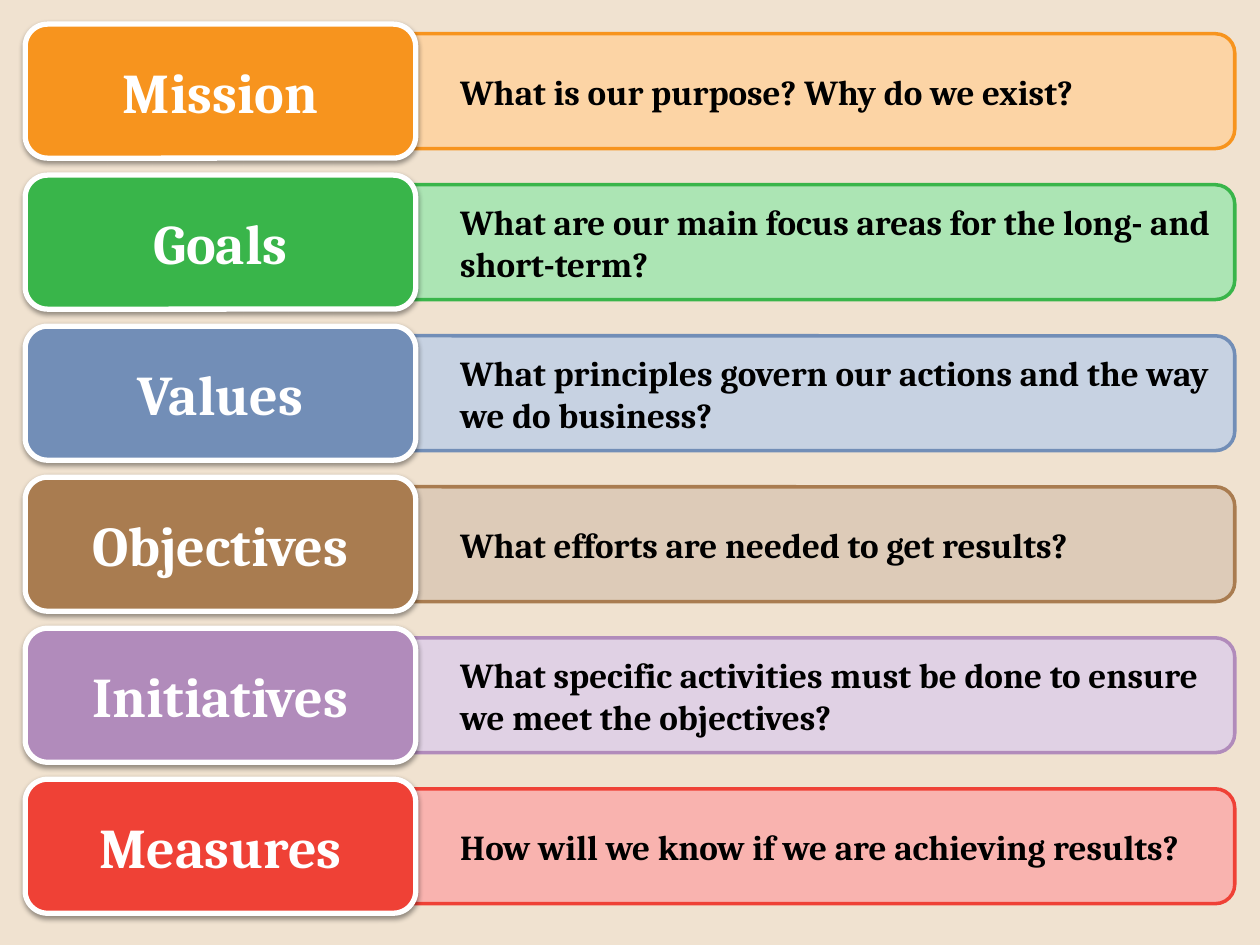
from lxml.etree import SubElement
from pptx import Presentation
from pptx.dml.color import RGBColor
from pptx.enum.shapes import MSO_SHAPE
from pptx.enum.text import MSO_ANCHOR, PP_ALIGN
from pptx.oxml.ns import qn
from pptx.util import Pt

COLORS = {
    "background": "F0E2D0", "white": "FFFFFF", "black": "000000",
    "orange": "F7941E", "orange_tint": "FCD4A5",
    "green": "39B54A", "green_tint": "ACE5B4",
    "blue": "728EB7", "blue_tint": "C7D2E2",
    "brown": "A97C50", "brown_tint": "DDCBB8",
    "purple": "B18BBB", "purple_tint": "E0D1E4",
    "red": "EF4136", "red_tint": "F9B3AF",
}
FONT = "Cambria"
ROWS = [
    ("Mission", "What is our purpose? Why do we exist?", "orange"),
    ("Goals", "What are our main focus areas for the long- and short-term?", "green"),
    ("Values", "What principles govern our actions and the way we do business?", "blue"),
    ("Objectives", "What efforts are needed to get results?", "brown"),
    ("Initiatives", "What specific activities must be done to ensure we meet the objectives?",
     "purple"),
    ("Measures", "How will we know if we are achieving results?", "red"),
]
# Row grid, in points
LEFT, TOP, WIDTH, HEIGHT, PITCH = 14.4, 13.8, 691.2, 76.6, 86.3
LABEL_WIDTH, PANEL_OFFSET, PANEL_HEIGHT = 223.2, 201.6, 65.6
QUESTION_INDENT = 36.7


def rgb(name):
    return RGBColor.from_string(COLORS[name])


def add_box(s, box, fill, line, line_width, text, size, color, align):
    sp = s.shapes.add_shape(MSO_SHAPE.ROUNDED_RECTANGLE, *(Pt(v) for v in box))
    sp.fill.solid()
    sp.fill.fore_color.rgb = rgb(fill)
    sp.line.color.rgb = rgb(line)
    sp.line.width = Pt(line_width)
    sp.shadow.inherit = False
    tf = sp.text_frame
    tf.word_wrap = True
    tf.vertical_anchor = MSO_ANCHOR.MIDDLE
    p = tf.paragraphs[0]
    p.alignment = align
    r = p.add_run()
    r.text = text
    r.font.name = FONT
    r.font.size = Pt(size)
    r.font.bold = True
    r.font.color.rgb = rgb(color)
    return sp


def add_soft_shadow(sp):
    effects = sp._element.spPr.find(qn("a:effectLst"))
    shadow = SubElement(effects, qn("a:outerShdw"), blurRad=str(Pt(3.1)),
                        dist=str(Pt(1.6)), dir="5400000", rotWithShape="0")
    color = SubElement(shadow, qn("a:srgbClr"), val=COLORS["black"])
    SubElement(color, qn("a:alpha"), val="38000")


def add_row(s, box, label, question, hue):
    x, y, w, h = box
    # Question panel, centred on the row and tucked behind the label
    panel_box = (x + PANEL_OFFSET, y + (h - PANEL_HEIGHT) / 2,
                 w - PANEL_OFFSET, PANEL_HEIGHT)
    panel = add_box(s, panel_box, hue + "_tint", hue, 2, question, 20, "black", PP_ALIGN.LEFT)
    pPr = panel.text_frame.paragraphs[0]._p.get_or_add_pPr()
    pPr.set("marL", str(Pt(QUESTION_INDENT)))
    # Label
    tab = add_box(s, (x, y, LABEL_WIDTH, h), hue, "white", 3, label, 32, "white",
                  PP_ALIGN.CENTER)
    add_soft_shadow(tab)


def main():
    prs = Presentation()
    prs.slide_width, prs.slide_height = Pt(720), Pt(540)
    s = prs.slides.add_slide(prs.slide_layouts[6])
    s.background.fill.solid()
    s.background.fill.fore_color.rgb = rgb("background")
    for i, (label, question, hue) in enumerate(ROWS):
        add_row(s, (LEFT, TOP + i * PITCH, WIDTH, HEIGHT), label, question, hue)
    prs.save("out.pptx")


if __name__ == "__main__":
    main()
